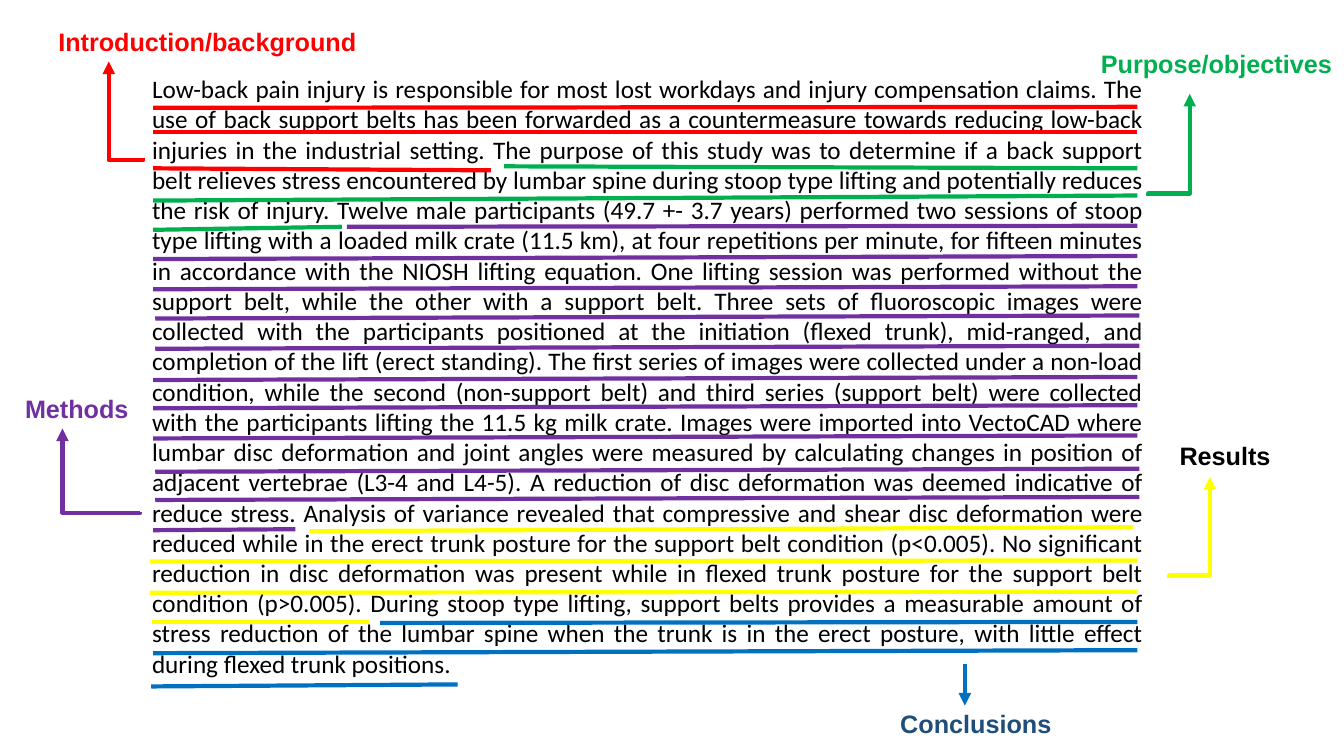
"""Build a slide that marks the parts of a research abstract."""
from lxml import etree
from pptx import Presentation
from pptx.dml.color import RGBColor
from pptx.enum.shapes import MSO_CONNECTOR as Kind
from pptx.enum.text import MSO_AUTO_SIZE as Auto, PP_ALIGN as Align
from pptx.oxml.ns import qn
from pptx.util import Inches, Pt

COLORS = {
    "red": "FF0000", "green": "00B050", "purple": "7030A0", "yellow": "FFFF00",
    "blue": "0070C0", "navy": "1E4E79", "black": "000000",
}
BODY = [
    "Low-back pain injury is responsible for most lost workdays and injury compensation claims.",
    "The use of back support belts has been forwarded as a countermeasure towards reducing "
    "low-back injuries in the industrial setting.",
    "The purpose of this study was to determine if a back support belt relieves stress "
    "encountered by lumbar spine during stoop type lifting and potentially reduces the risk of "
    "injury.",
    "Twelve male participants (49.7 +- 3.7 years) performed two sessions of stoop type lifting "
    "with a loaded milk crate (11.5 km), at four repetitions per minute, for fifteen minutes in "
    "accordance with the NIOSH lifting equation.",
    "One lifting session was performed without the support belt, while the other with a support "
    "belt.",
    "Three sets of fluoroscopic images were collected with the participants positioned at the "
    "initiation (flexed trunk), mid-ranged, and completion of the lift (erect standing).",
    "The first series of images were collected under a non-load condition, while the second "
    "(non-support belt) and third series (support belt) were collected with the participants "
    "lifting the 11.5 kg milk crate.",
    "Images were imported into VectoCAD where lumbar disc deformation and joint angles were "
    "measured by calculating changes in position of adjacent vertebrae (L3-4 and L4-5).",
    "A reduction of disc deformation was deemed indicative of reduce stress.",
    "Analysis of variance revealed that compressive and shear disc deformation were reduced "
    "while in the erect trunk posture for the support belt condition (p<0.005).",
    "No significant reduction in disc deformation was present while in flexed trunk posture for "
    "the support belt condition (p>0.005).",
    "During stoop type lifting, support belts provides a measurable amount of stress reduction "
    "of the lumbar spine when the trunk is in the erect posture, with little effect during "
    "flexed trunk positions.",
]
LEFT, RIGHT = 1.52, 11.28
LABELS = [
    ("Introduction/background", "red", (0.48, 0.21, 3.19)),
    ("Purpose/objectives", "green", (10.82, 0.43, 2.52)),
    ("Methods", "purple", (0.15, 3.85, 1.24)),
    ("Results", "black", (11.6, 4.32, 1.11)),
    ("Conclusions", "navy", (8.83, 6.98, 1.72)),
]
RULES = {
    "red": [(LEFT, 1.07, RIGHT, 1.06), (LEFT, 1.31, RIGHT, 1.31), (LEFT, 1.67, 4.87, 1.69)],
    "green": [(5, 1.65, RIGHT, 1.67), (LEFT, 1.99, RIGHT, 1.94), (LEFT, 2.28, 3.39, 2.25)],
    "purple": [(3.44, 2.25, RIGHT, 2.24)] + [
        (LEFT + dx, y, RIGHT + dx, y - 0.03)
        for dx, y in [(0, 2.57), (0, 2.87), (0.02, 3.16), (0.02, 3.46), (0, 3.77),
                      (0, 4.05), (0, 4.35), (0.02, 4.68), (0.02, 4.96)]
    ] + [(LEFT, 5.26, 2.93, 5.25)],
    "yellow": [(3.07, 5.27, 11.24, 5.23), (1.49, 5.57, RIGHT, 5.56),
               (1.49, 5.88, RIGHT, 5.87), (1.51, 6.17, 3.66, 6.17)],
    "blue": [(3.77, 6.18, RIGHT, 6.17), (LEFT, 6.48, RIGHT, 6.45), (1.5, 6.81, 4.54, 6.79)],
}
BENDS = [
    ("red", (1.42, 1.57, 1.08, 0.61), -0.02),
    ("green", (11.39, 1.94, 11.8, 0.93), 0.02),
    ("purple", (1.39, 5.08, 0.62, 4.25), -0.01),
    ("yellow", (11.6, 5.73, 12, 4.73), 0.02),
]
DROP = (9.57, 6.59, 9.57, 7)


def add_text(slide, text, box, font="Arial", color="black", bold=False, align=Align.LEFT):
    shape = slide.shapes.add_textbox(*map(Inches, box))
    frame = shape.text_frame
    frame.word_wrap = True
    frame.auto_size = Auto.SHAPE_TO_FIT_TEXT
    para = frame.paragraphs[0]
    para.alignment = align
    run = para.add_run()
    run.text = text
    run.font.name, run.font.size, run.font.bold = font, Pt(18), bold
    run.font.color.rgb = RGBColor.from_string(COLORS[color])


def add_line(slide, color, ends, kind=Kind.STRAIGHT, arrow=False):
    line = slide.shapes.add_connector(kind, *map(Inches, ends))
    line.line.width = Pt(3)
    line.line.color.rgb = RGBColor.from_string(COLORS[color])
    props = line._element.spPr
    if arrow:
        etree.SubElement(props.find(qn("a:ln")), qn("a:tailEnd"), type="triangle")
    etree.SubElement(props, qn("a:effectLst"))
    return props


def add_bend(slide, color, ends, bend):
    x1, y1, x2, y2 = ends
    midx, midy = (x1 + x2) / 2, (y1 + y2) / 2
    halfw, halfh = (y1 - y2) / 2, abs(x2 - x1) / 2
    side, turn = (1, 90) if x2 < x1 else (-1, 270)
    box = (midx + side * halfw, midy - halfh, midx - side * halfw, midy + halfh)
    props = add_line(slide, color, box, Kind.ELBOW, True)
    props.find(qn("a:xfrm")).set("rot", str(turn * 60000))
    guides = props.find(qn("a:prstGeom")).find(qn("a:avLst"))
    etree.SubElement(guides, qn("a:gd"), name="adj1", fmla=f"val {round(bend * 100000)}")


def main():
    deck = Presentation()
    deck.slide_width, deck.slide_height = Inches(13.33), Inches(7.5)
    slide = deck.slides.add_slide(deck.slide_layouts[6])
    add_text(slide, " ".join(BODY), (1.41, 0.68, 10.03, 6.46), font="Calibri",
             align=Align.JUSTIFY)
    for color, rules in RULES.items():
        for ends in rules:
            add_line(slide, color, ends)
    for color, ends, bend in BENDS:
        add_bend(slide, color, ends, bend)
    add_line(slide, "blue", DROP, arrow=True)
    for text, color, place in LABELS:
        add_text(slide, text, (*place, 0.4), color=color, bold=True)
    deck.save("out.pptx")


if __name__ == "__main__":
    main()
